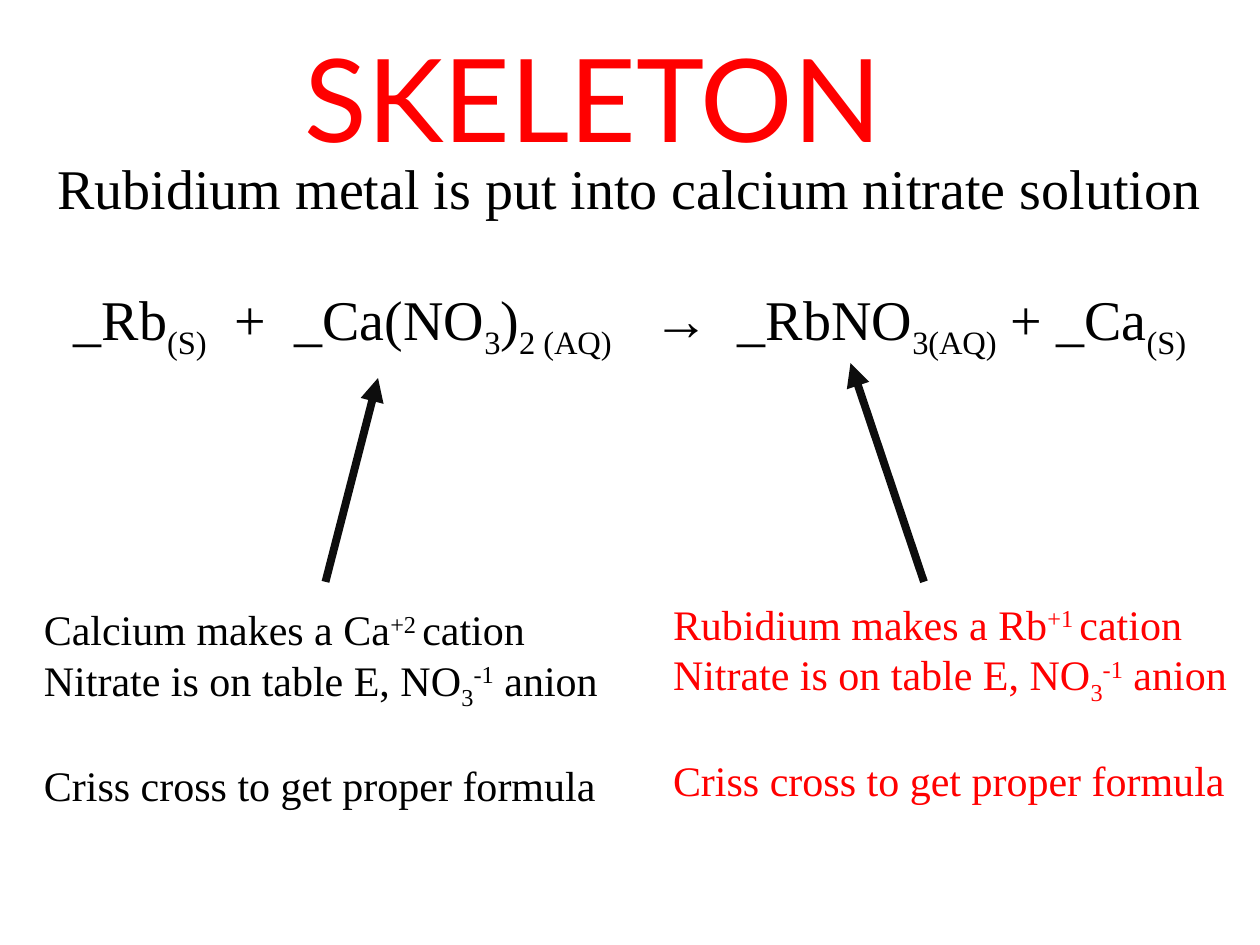
from dataclasses import dataclass
from typing import NamedTuple

from lxml.etree import SubElement
from pptx import Presentation
from pptx.dml.color import RGBColor
from pptx.enum.shapes import MSO_CONNECTOR
from pptx.enum.text import MSO_ANCHOR, MSO_AUTO_SIZE, PP_ALIGN
from pptx.oxml.ns import qn
from pptx.slide import Slide
from pptx.text.text import TextFrame
from pptx.util import Pt

BLACK = RGBColor(0x00, 0x00, 0x00)
RED = RGBColor(0xFF, 0x00, 0x00)
ARROW_COLOR = RGBColor(0x0D, 0x0D, 0x0D)
SERIF = "Times New Roman"
SUBSCRIPT = -25000
SUPERSCRIPT = 30000


class Piece(NamedTuple):
    text: str
    baseline: int = 0
    spacing: int = 0


class Line(NamedTuple):
    pieces: list[Piece]
    space_before: float = 0


@dataclass
class TextBlock:
    left: float
    top: float
    width: float
    height: float
    lines: list[Line]
    size: float
    color: RGBColor
    font_name: str = SERIF
    alignment: PP_ALIGN = PP_ALIGN.LEFT


class Arrow(NamedTuple):
    start_x: float
    start_y: float
    end_x: float
    end_y: float


def sub(text: str) -> Piece:
    return Piece(text, SUBSCRIPT)


def sup(text: str) -> Piece:
    return Piece(text, SUPERSCRIPT)


def gap(extra_points: int) -> Piece:
    return Piece(" ", spacing=extra_points * 100)


def explanation(left: float, top: float, metal: str, symbol: str,
                charge: str, color: RGBColor) -> TextBlock:
    lines = [
        Line([Piece(f"{metal} makes a {symbol}"), sup(f"{charge} "), Piece("cation")]),
        Line([Piece("Nitrate is on table E, NO"), sub("3"), sup("-1"), Piece(" anion")]),
        Line([Piece("Criss cross to get proper formula")], space_before=27.6),
    ]
    return TextBlock(left, top, 342, 124, lines, 24, color)


def fill_text(frame: TextFrame, block: TextBlock) -> None:
    frame.word_wrap = True
    frame.auto_size = MSO_AUTO_SIZE.NONE
    frame.vertical_anchor = MSO_ANCHOR.TOP
    for index, line in enumerate(block.lines):
        paragraph = frame.paragraphs[0] if index == 0 else frame.add_paragraph()
        paragraph.alignment = block.alignment
        paragraph.space_before = Pt(line.space_before)
        paragraph.font.name = block.font_name
        paragraph.font.size = Pt(block.size)
        paragraph.font.color.rgb = block.color
        for piece in line.pieces:
            run = paragraph.add_run()
            run.text = piece.text
            properties = run._r.get_or_add_rPr()
            if piece.baseline:
                properties.set("baseline", str(piece.baseline))
            if piece.spacing:
                properties.set("spc", str(piece.spacing))


def add_text(slide: Slide, block: TextBlock) -> None:
    shape = slide.shapes.add_textbox(
        Pt(block.left), Pt(block.top), Pt(block.width), Pt(block.height))
    fill_text(shape.text_frame, block)


def set_title(slide: Slide, block: TextBlock) -> None:
    shape = slide.shapes.title
    shape.left, shape.top = Pt(block.left), Pt(block.top)
    shape.width, shape.height = Pt(block.width), Pt(block.height)
    fill_text(shape.text_frame, block)


def add_arrow(slide: Slide, arrow: Arrow) -> None:
    connector = slide.shapes.add_connector(
        MSO_CONNECTOR.STRAIGHT, *(Pt(value) for value in arrow))
    connector.line.color.rgb = ARROW_COLOR
    connector.line.width = Pt(4.5)
    SubElement(connector.line._get_or_add_ln(), qn("a:tailEnd"), type="triangle")
    SubElement(connector._element.spPr, qn("a:effectLst"))


TITLE = TextBlock(120, 12, 438, 87, [Line([Piece("SKELETON")])], 66, RED,
                  "Lato", PP_ALIGN.CENTER)

EQUATION = [
    Piece("_Rb"), sub("(S)"), gap(8), Piece("+"), gap(8),
    Piece("_Ca(NO"), sub("3"), Piece(")"), sub("2 (AQ)"),
    gap(16), Piece("→"), gap(8),
    Piece("_RbNO"), sub("3(AQ)"), Piece(" + _Ca"), sub("(S)"),
]

TEXT_BLOCKS = [
    TextBlock(0, 84, 720, 124, [
        Line([Piece("Rubidium metal is put into calcium nitrate solution")]),
        Line(EQUATION, space_before=36.8),
    ], 32, BLACK, alignment=PP_ALIGN.CENTER),
    explanation(18, 341.5, "Calcium", "Ca", "+2", BLACK),
    explanation(377.5, 338.5, "Rubidium", "Rb", "+1", RED),
]

ARROWS = [Arrow(186, 332.5, 216, 216), Arrow(528, 332.5, 486, 207.5)]


def main() -> None:
    presentation = Presentation()
    presentation.slide_width, presentation.slide_height = Pt(720), Pt(540)
    slide = presentation.slides.add_slide(presentation.slide_layouts[5])
    set_title(slide, TITLE)
    for block in TEXT_BLOCKS:
        add_text(slide, block)
    for arrow in ARROWS:
        add_arrow(slide, arrow)
    presentation.save("out.pptx")


if __name__ == "__main__":
    main()
